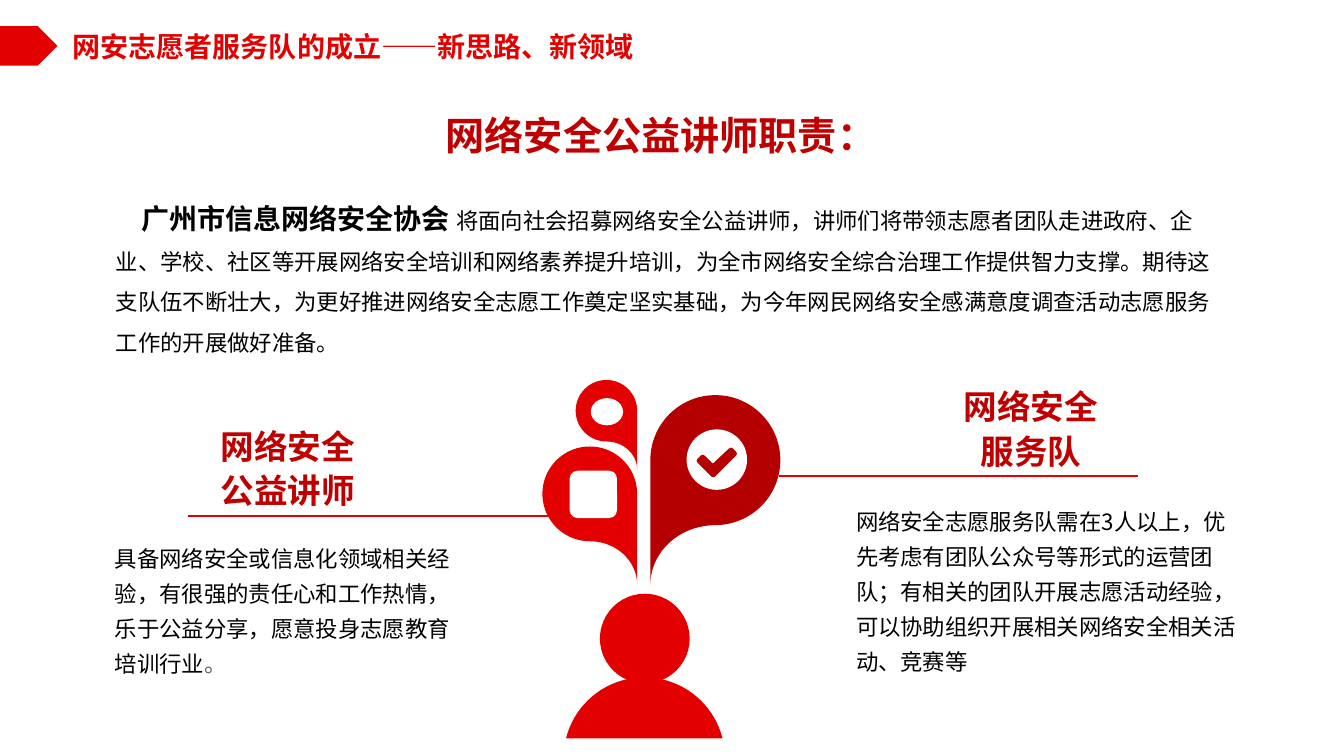
from math import cos, radians, sin

from lxml import etree
from pptx import Presentation
from pptx.dml.color import RGBColor
from pptx.enum.shapes import MSO_CONNECTOR, MSO_SHAPE
from pptx.enum.text import MSO_ANCHOR, MSO_AUTO_SIZE, PP_ALIGN
from pptx.oxml.ns import qn
from pptx.util import Inches, Pt

PENTAGON, OVAL, ROUNDED = MSO_SHAPE.PENTAGON, MSO_SHAPE.OVAL, MSO_SHAPE.ROUNDED_RECTANGLE
TOP, BOTTOM = MSO_ANCHOR.TOP, MSO_ANCHOR.BOTTOM
LEFT, CENTER = PP_ALIGN.LEFT, PP_ALIGN.CENTER
RED, DARK_RED, TITLE_RED = "E20000", "B40000", "C00000"
WHITE, BLACK, GRAY = "FFFFFF", "000000", "595959"
CJK = "Noto Sans CJK SC"


def paint(sp, color):
    sp.shadow.inherit = False
    sp.fill.solid()
    sp.fill.fore_color.rgb = RGBColor.from_string(color)
    sp.line.fill.background()


def write(sp, runs, font=CJK, align=LEFT, anchor=TOP, spacing=1.0, inset=0.05, indent=0):
    """Fill a text frame with one paragraph; runs are (text, size, color, bold)."""
    tf = sp.text_frame
    tf.word_wrap = True
    tf.auto_size = MSO_AUTO_SIZE.SHAPE_TO_FIT_TEXT
    tf.vertical_anchor = anchor
    tf.margin_left = tf.margin_right = Inches(inset)
    tf.margin_top = tf.margin_bottom = Inches(0.05)
    p = tf.paragraphs[0]
    p.alignment = align
    p.line_spacing = spacing
    pPr = p._p.get_or_add_pPr()
    pPr.set("indent", str(Inches(indent)))
    pPr.set("hangingPunct", "0")
    for text, size, color, bold in runs:
        r = p.add_run()
        r.text = text
        r.font.size = Pt(size)
        r.font.bold = bold
        r.font.color.rgb = RGBColor.from_string(color)
        r.font.name = font
        etree.SubElement(r.font._element, qn("a:ea")).set("typeface", CJK)


prs = Presentation()
prs.slide_width, prs.slide_height = Inches(13.33), Inches(7.5)
s = prs.slides.add_slide(prs.slide_layouts[5])

# Header
marker = s.shapes.add_shape(PENTAGON, Inches(0), Inches(0.26), Inches(0.57), Inches(0.39))
paint(marker, RED)
title = s.shapes.title
title.left, title.top, title.width, title.height = [Inches(v) for v in (0.62, 0.24, 6.46, 0.44)]
write(title, [("网安志愿者服务队的成立——新思路、新领域", 20, RED, True)], inset=0.1)

# Texts
heading = {"align": CENTER, "anchor": BOTTOM, "spacing": 1.1}
texts = [
    ((4.37, 1.06, 4.6, 0.57), {"font": "Arial"},
     [("网络安全公益讲师职责：", 28, TITLE_RED, True)]),
    ((1.1, 1.78, 11.14, 1.81), {"font": "Arial", "spacing": 1.5, "indent": 0.25},
     [("广州市信息网络安全协会 ", 20, BLACK, True),
      ("将面向社会招募网络安全公益讲师，讲师们将带领志愿者团队走进政府、企业、学校、社区等开展"
       "网络安全培训和网络素养提升培训，为全市网络安全综合治理工作提供智力支撑。期待这支队伍不断壮大，"
       "为更好推进网络安全志愿工作奠定坚实基础，为今年网民网络安全感满意度调查活动志愿服务工作的"
       "开展做好准备。", 16, BLACK, False)]),
    ((1.09, 5.28, 3.54, 1.5), {"spacing": 1.3},
     [("具备网络安全或信息化领域相关经验，有很强的责任心和工作热情，乐于公益分享，"
       "愿意投身志愿教育培训行业", 16, BLACK, False),
      ("。", 16, GRAY, False)]),
    ((2.1, 4.12, 1.51, 0.99), heading, [("网络安全公益讲师", 24, TITLE_RED, True)]),
    ((8.44, 4.91, 3.91, 1.85), {"spacing": 1.3},
     [("网络安全志愿服务队需在3人以上，优先考虑有团队公众号等形式的运营团队；"
       "有相关的团队开展志愿活动经验，可以协助组织开展相关网络安全相关活动、竞赛等",
       16, BLACK, False)]),
    ((9.5, 3.73, 1.45, 0.99), heading, [("网络安全服务队", 24, TITLE_RED, True)]),
]
for box, style, runs in texts:
    sp = s.shapes.add_textbox(*[Inches(v) for v in box])
    write(sp, runs, **style)

# Speech drops: three quarters of a circle, then a concave tail; unit width
drop = [(0.5 + 0.5 * cos(radians(a)), 0.5 - 0.5 * sin(radians(a))) for a in range(0, 271, 5)]
drop += [(0.5 + 0.5 * sin(radians(a)), 1.46 - 0.46 * cos(radians(a))) for a in range(5, 91, 5)]

# Each drop: x of the tail side, top, signed width (negative mirrors it)
outlines = []
for tail_x, top, width, color in [(6.45, 3.92, -1.29, DARK_RED),
                                  (6.32, 4.43, 0.94, RED),
                                  (6.32, 3.77, 0.61, RED)]:
    outlines.append((color, [(tail_x + (x - 1) * width, top + y * abs(width)) for x, y in drop]))

shoulders = [(6.39 + 0.8 * cos(radians(a)), 7.52 - 0.8 * sin(radians(a)))
             for a in range(14, 167, 4)]
outlines.append((RED, shoulders))
check = [(7.3, 4.52), (7.09, 4.73), (7.06, 4.73), (6.92, 4.59), (6.91, 4.57),
         (6.92, 4.55), (6.95, 4.52), (6.97, 4.51), (6.99, 4.52), (7.07, 4.6),
         (7.23, 4.45), (7.25, 4.44), (7.27, 4.45), (7.3, 4.48), (7.31, 4.5)]
outlines.append((DARK_RED, check))

for color, points in outlines:
    if points is check:
        # Head and badges sit under the check mark and over the drops
        for kind, x, y, w, h, badge_color in [(OVAL, 5.95, 5.89, 0.89, 0.89, RED),
                                              (OVAL, 5.86, 3.95, 0.32, 0.27, WHITE),
                                              (OVAL, 6.81, 4.26, 0.6, 0.6, WHITE),
                                              (ROUNDED, 5.65, 4.67, 0.47, 0.47, WHITE)]:
            sp = s.shapes.add_shape(kind, Inches(x), Inches(y), Inches(w), Inches(h))
            paint(sp, badge_color)
    corners = [(Inches(x), Inches(y)) for x, y in points]
    builder = s.shapes.build_freeform(*corners[0])
    builder.add_line_segments(corners[1:], close=True)
    paint(builder.convert_to_shape(), color)

# Rules under the headings
for x1, x2, y in [(1.86, 5.44, 5.12), (7.73, 11.29, 4.72)]:
    rule = s.shapes.add_connector(MSO_CONNECTOR.STRAIGHT, Inches(x1), Inches(y), Inches(x2), Inches(y))
    rule.line.color.rgb = RGBColor.from_string(RED)
    rule.line.width = Pt(1.5)
    etree.SubElement(rule._element.spPr, qn("a:effectLst"))

prs.save("out.pptx")
